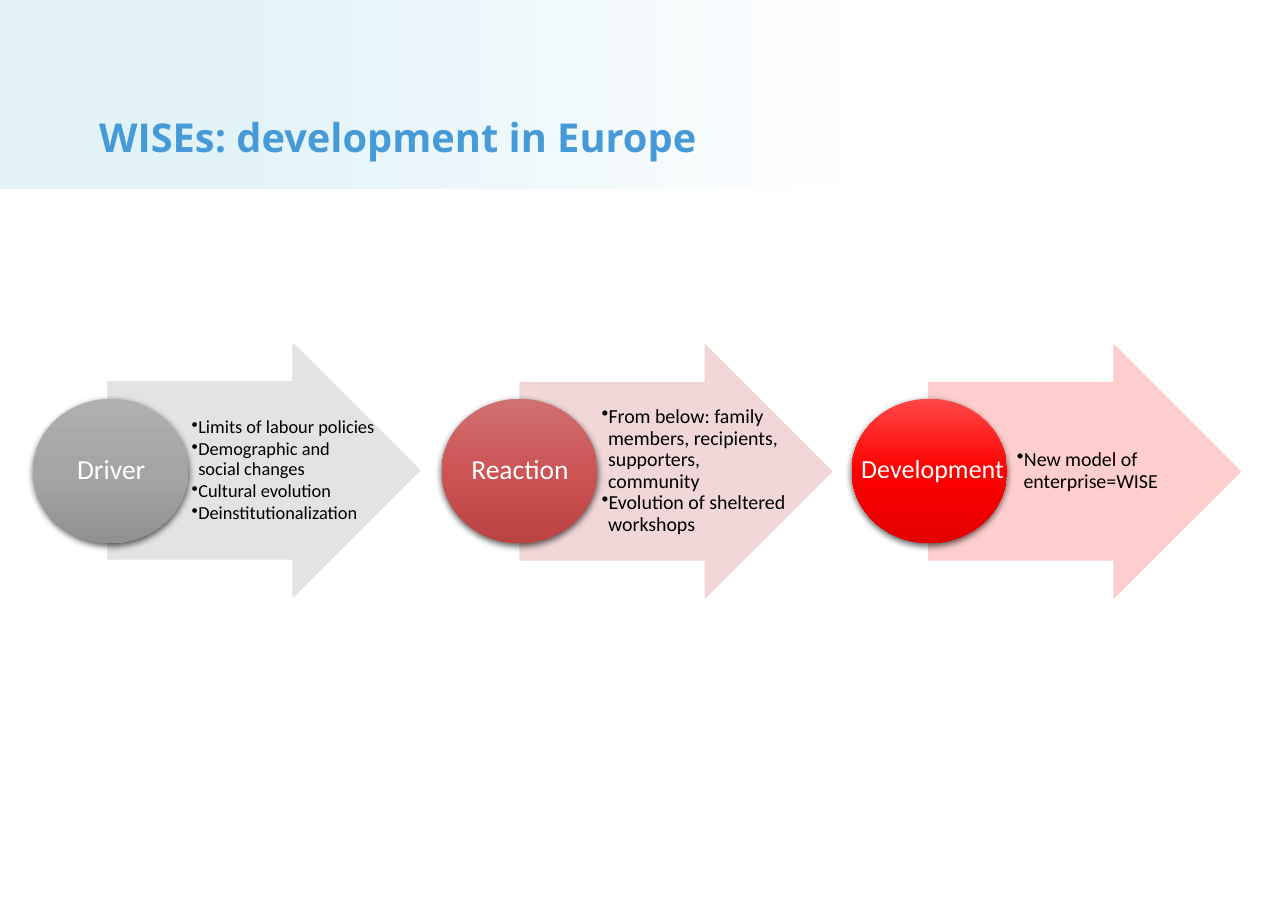
import pptx
import pptx.util
import pptx.dml.color
import pptx.enum.shapes
import pptx.enum.text
import pptx.oxml.ns
import lxml.etree

PX = 9144  # EMU per px, 100 px to the inch
qn = pptx.oxml.ns.qn
Pt = pptx.util.Pt
RGB = pptx.dml.color.RGBColor.from_string
SHAPE = pptx.enum.shapes.MSO_SHAPE
ALIGN = pptx.enum.text.PP_ALIGN
ANCHOR = pptx.enum.text.MSO_ANCHOR

THEME = {
    "title_font": "Open Sans", "title_size": 26, "title": "479AD8",
    "font": "Calibri", "text": "000000", "label": "FFFFFF",
    "band": [(0, "FFFFFF"), (75, "E2F3F8"), (100, "E2F3F8")],
    "gray": ("E0E0E0", [(0, "AFAFAF"), (50, "A5A5A5"), (100, "919191")]),
    "rose": ("F0D3D3", [(0, "CE7070"), (50, "CD5455"), (100, "BB4343")]),
    "red": ("FEC9C9", [(0, "FF4747"), (50, "FF0000"), (100, "E30000")]),
}

# Positions are left edges in px
STEPS = [
    {"label": "Driver", "label_size": 18, "label_box": (51, 381, 100, 93),
     "colors": "gray", "arrow": (98, 312), "disc": 30,
     "list_box": (171, 347, 171, 161), "size": 12, "gap": 1.5, "indent": -8,
     "items": ["Limits of labour policies", "Demographic and social changes",
               "Cultural evolution", "Deinstitutionalization"]},
    {"label": "Reaction", "label_size": 18, "label_box": (422, 381, 100, 93),
     "colors": "rose", "arrow": (472, 313), "disc": 401,
     "list_box": (543, 347, 171, 161), "size": 13, "gap": 0, "indent": -9,
     "items": ["From below: family members, recipients, supporters, community",
               "Evolution of sheltered workshops"]},
    {"label": "Development", "label_size": 17, "label_box": (773, 380, 147, 93),
     "colors": "red", "arrow": (843, 313), "disc": 773,
     "list_box": (920, 347, 138, 161), "size": 13, "gap": 0, "indent": -9,
     "items": ["New model of enterprise=WISE"]},
]


def add_shape(kind, box, stops=None, angle=0):
    """Add a plain shape, with a gradient if stops are given."""
    sp = s.shapes.add_shape(kind, *[v * PX for v in box])
    sp.shadow.inherit = False
    sp.line.fill.background()
    if stops:
        sp.fill.gradient()
        grad = sp.element.spPr.find(qn("a:gradFill"))
        grad.find(qn("a:lin")).set("ang", str(angle * 60000))
        gs_list = grad.find(qn("a:gsLst"))
        for gs in list(gs_list):
            gs_list.remove(gs)
        for pos, color in stops:
            gs = lxml.etree.SubElement(gs_list, qn("a:gs"), pos=str(pos * 1000))
            lxml.etree.SubElement(gs, qn("a:srgbClr"), val=color)
    return sp


def add_text(box, lines, size, color, left_inset=1):
    """Add a vertically centred text box and return its frame."""
    tf = s.shapes.add_textbox(*[v * PX for v in box]).text_frame
    tf.word_wrap = True
    tf.vertical_anchor = ANCHOR.MIDDLE
    tf.margin_left = left_inset * PX
    tf.margin_top = tf.margin_right = tf.margin_bottom = PX
    tf.text = "\n".join(lines)
    for p in tf.paragraphs:
        p.line_spacing = 0.9
        for r in p.runs:
            r.font.name = THEME["font"]
            r.font.size = Pt(size)
            r.font.color.rgb = RGB(color)
    return tf


prs = pptx.Presentation()
prs.slide_width, prs.slide_height = 1169 * PX, 827 * PX
s = prs.slides.add_slide(prs.slide_layouts[5])

# Header band, behind the title
band = add_shape(SHAPE.RECTANGLE, (0, 0, 802, 172), THEME["band"], 180)
s.shapes.element.insert(2, band.element)

# Title
title = s.shapes.title
title.left, title.top, title.width, title.height = [v * PX for v in (80, 0, 956, 151)]
tf = title.text_frame
tf.text = "WISEs: development in Europe"
tf.auto_size = pptx.enum.text.MSO_AUTO_SIZE.NONE
tf.vertical_anchor = ANCHOR.BOTTOM
p = tf.paragraphs[0]
p.alignment = ALIGN.LEFT
p.line_spacing = 0.9
r = p.runs[0]
r.font.name = THEME["title_font"]
r.font.size = Pt(THEME["title_size"])
r.font.bold = True
r.font.color.rgb = RGB(THEME["title"])

for step in STEPS:
    pale, stops = THEME[step["colors"]]

    # Arrow
    sp = add_shape(SHAPE.RIGHT_ARROW, (*step["arrow"], 283, 230))
    sp.adjustments[0], sp.adjustments[1] = 0.7, 0.5
    sp.fill.solid()
    sp.fill.fore_color.rgb = RGB(pale)
    sp.line.color.rgb = RGB(pale)
    sp.line.width = Pt(0.75)
    for clr in sp.element.spPr.iter(qn("a:srgbClr")):
        lxml.etree.SubElement(clr, qn("a:alpha"), val="90000")

    # Bullet list
    tf = add_text(step["list_box"], step["items"], step["size"], THEME["text"], 3)
    for i, p in enumerate(tf.paragraphs):
        p.level = 1
        if i and step["gap"]:
            p.space_before = Pt(step["gap"])
        pPr = p._p.get_or_add_pPr()
        pPr.set("marL", str(6 * PX))
        pPr.set("indent", str(step["indent"] * PX))
        bu_clr = lxml.etree.SubElement(pPr, qn("a:buClr"))
        lxml.etree.SubElement(bu_clr, qn("a:srgbClr"), val=THEME["text"])
        lxml.etree.SubElement(pPr, qn("a:buChar"), char="•")

    # Disc with a soft shadow
    sp = add_shape(SHAPE.OVAL, (step["disc"], 362, 141, 131), stops, 90)
    shadow = lxml.etree.SubElement(
        sp.element.spPr.find(qn("a:effectLst")), qn("a:outerShdw"),
        blurRad=str(Pt(4.5)), dist=str(Pt(1.5)), dir="5400000", rotWithShape="0")
    clr = lxml.etree.SubElement(shadow, qn("a:srgbClr"), val="000000")
    lxml.etree.SubElement(clr, qn("a:alpha"), val="63000")

    # Disc label
    tf = add_text(step["label_box"], [step["label"]], step["label_size"], THEME["label"])
    tf.paragraphs[0].alignment = ALIGN.CENTER

prs.save("out.pptx")
